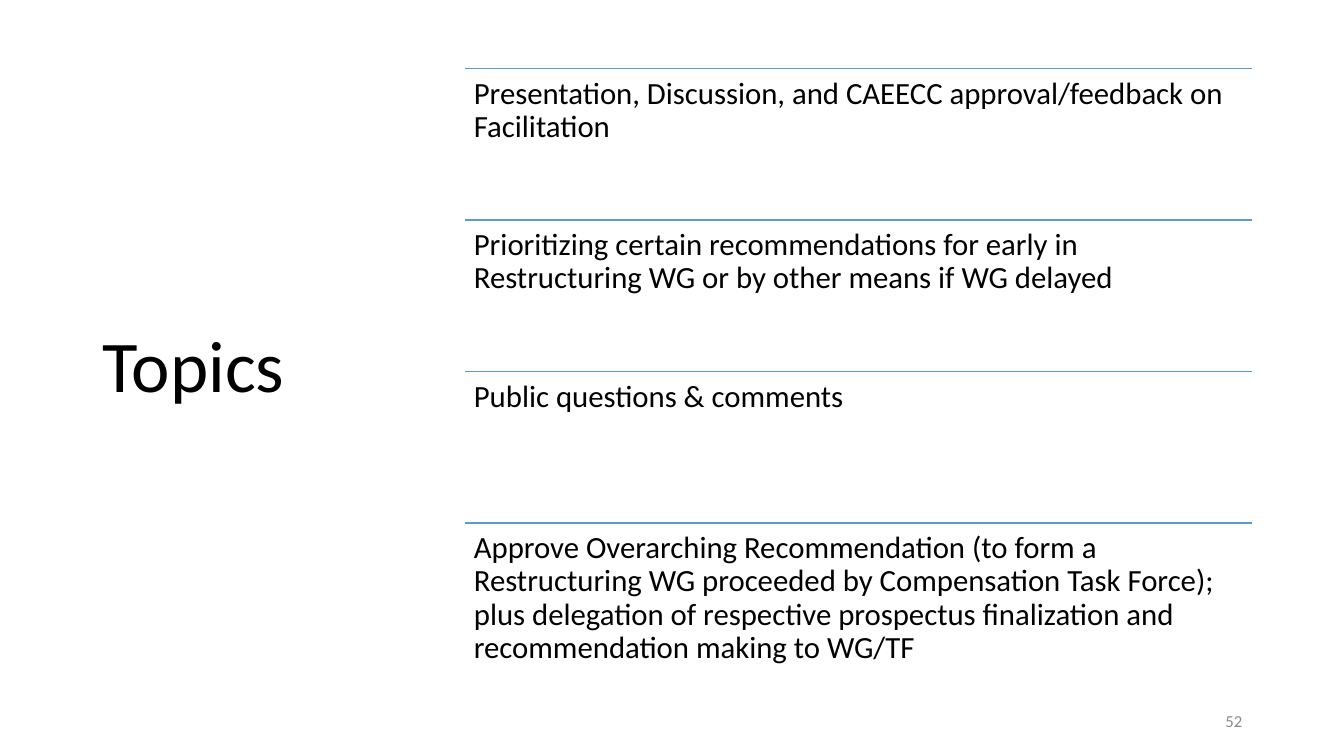
from dataclasses import dataclass

from lxml.etree import SubElement
from pptx import Presentation
from pptx.dml.color import RGBColor
from pptx.enum.shapes import MSO_CONNECTOR
from pptx.enum.text import MSO_ANCHOR as Anchor, PP_ALIGN as Align
from pptx.oxml.ns import qn
from pptx.slide import Slide
from pptx.text.text import TextFrame
from pptx.util import Inches, Pt

LIST_LEFT, LIST_TOP, LIST_WIDTH = 4.61, 0.68, 7.81
ROW_HEIGHT = 1.503


@dataclass
class Topic:
    row: int
    text: str

    @property
    def top(self) -> float:
        return LIST_TOP + self.row * ROW_HEIGHT


WORDINGS = [
    "Presentation, Discussion, and CAEECC approval/feedback on Facilitation",
    "Prioritizing certain recommendations for early in Restructuring WG "
    "or by other means if WG delayed",
    "Public questions & comments",
    "Approve Overarching Recommendation (to form a Restructuring WG proceeded by "
    "Compensation Task Force); plus delegation of respective prospectus finalization "
    "and recommendation making to WG/TF",
]
TOPICS = [Topic(row, text) for row, text in enumerate(WORDINGS)]


def color(value: str) -> RGBColor:
    return RGBColor.from_string(value)


def write(frame: TextFrame, text: str, *, size: float, fill: str = "000000",
          anchor: Anchor = Anchor.TOP, align: Align = Align.LEFT,
          spacing: float = 1.0, inset: float = 0.1) -> None:
    frame.word_wrap = True
    frame.vertical_anchor = anchor
    frame.margin_left = frame.margin_right = Inches(inset)
    frame.margin_top = frame.margin_bottom = Inches(min(inset, 0.09))
    para = frame.paragraphs[0]
    para.alignment = align
    para.line_spacing = spacing
    span = para.add_run()
    span.text = text
    span.font.name = "Calibri"
    span.font.size = Pt(size)
    span.font.color.rgb = color(fill)


def draw_topic(page: Slide, topic: Topic) -> None:
    left, top = Inches(LIST_LEFT), Inches(topic.top)
    width = Inches(LIST_WIDTH)
    rule = page.shapes.add_connector(MSO_CONNECTOR.STRAIGHT, left, top, left + width, top)
    rule.line.color.rgb = color("5B9BD5")
    rule.line.width = Pt(1)
    SubElement(rule._element.spPr, qn("a:effectLst"))
    box = page.shapes.add_textbox(left, top, width, Inches(ROW_HEIGHT))
    write(box.text_frame, topic.text, size=22, spacing=0.9, inset=0.09)


def main() -> None:
    deck = Presentation()
    deck.slide_width, deck.slide_height = Inches(13.33), Inches(7.5)
    page = deck.slides.add_slide(deck.slide_layouts[5])

    title = page.shapes.title
    title.left, title.top = Inches(0.92), Inches(0.61)
    title.width, title.height = Inches(3.69), Inches(6.09)
    write(title.text_frame, "Topics", size=52, anchor=Anchor.MIDDLE, spacing=0.9)

    for topic in TOPICS:
        draw_topic(page, topic)

    number = page.shapes.add_textbox(Inches(9.42), Inches(6.95), Inches(3), Inches(0.4))
    write(number.text_frame, "52", size=12, fill="8C8C8C",
          anchor=Anchor.MIDDLE, align=Align.RIGHT)

    deck.save("out.pptx")


if __name__ == "__main__":
    main()
